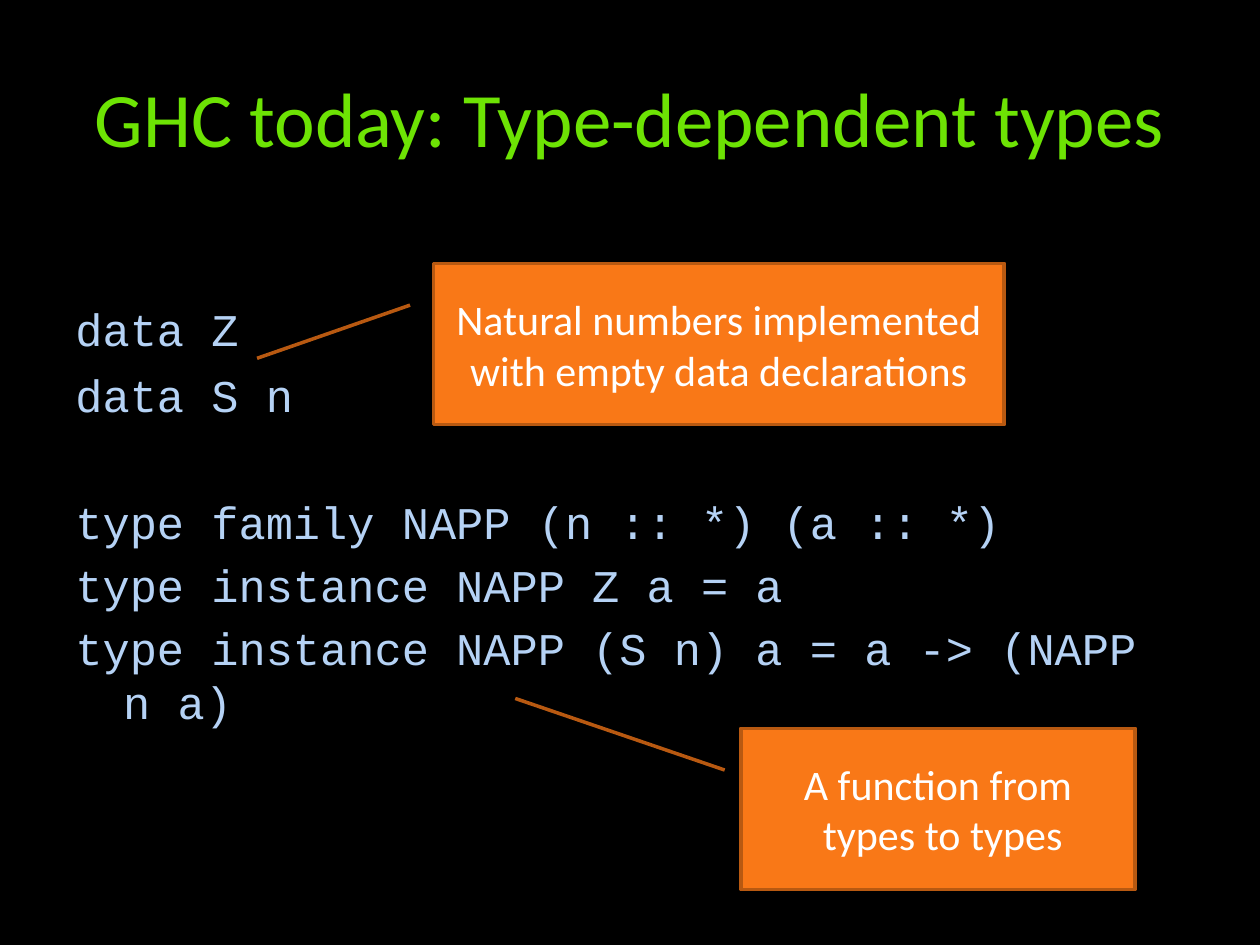
from pptx import Presentation
from pptx import util as u
from pptx.dml.color import RGBColor
from pptx.enum import shapes, text

# Content
TITLE = "GHC today: Type-dependent types"
CODE = [  # line, points of space before it
    ("data Z", 0),
    ("data S n", 7),
    ("type family NAPP (n :: *) (a :: *)", 41.5),
    ("type instance NAPP Z a = a", 5.2),
    ("type instance NAPP (S n) a = a -> (NAPP n a)", 5.2),
]
CALLOUTS = [  # place, pointer adjustments, lines
    ((3.44, 2.09, 4.53, 1.28), (0.259, -0.041, 0.589, -0.309),
     ["Natural numbers implemented with empty data declarations"]),
    ((5.88, 5.78, 3.13, 1.28), (0.259, -0.041, -0.185, -0.572),
     ["A function from", " types to types"]),
]

# Formats
TITLE_FONT = {"name": "Calibri", "size": u.Pt(44), "color": "6DE304"}
CODE_FONT = {"name": "Courier New", "size": u.Pt(25.9), "color": "B5D2F5"}
CALLOUT_FONT = {"name": "Calibri", "size": u.Pt(24), "color": "FFFFFF"}
CENTERED = {"alignment": text.PP_ALIGN.CENTER}


def paint(color_format, value):
    color_format.rgb = RGBColor.from_string(value)


def inches(place):
    return [u.Inches(length) for length in place]


def write(box, lines, font, para_format, anchor):
    frame = box.text_frame
    frame.word_wrap = True
    frame.vertical_anchor = anchor
    for index, line in enumerate(lines):
        para = frame.add_paragraph() if index else frame.paragraphs[0]
        for name, value in para_format.items():
            setattr(para, name, value)
        span = para.add_run()
        span.text = line
        for name, value in font.items():
            if name == "color":
                paint(span.font.color, value)
            else:
                setattr(span.font, name, value)


deck = Presentation()
deck.slide_width, deck.slide_height = inches((10, 7.5))
page = deck.slides.add_slide(deck.slide_layouts[6])
page.background.fill.solid()
paint(page.background.fill.fore_color, "000000")

# Title
title = page.shapes.add_textbox(*inches((0.5, 0.3, 9, 1.25)))
write(title, [TITLE], TITLE_FONT, CENTERED, text.MSO_ANCHOR.MIDDLE)

# Code with hanging indent, set below the top of its box
code = page.shapes.add_textbox(*inches((0.5, 1.75, 9, 4.95)))
code.text_frame.margin_top = u.Inches(0.64)
write(code, [line for line, _ in CODE], CODE_FONT,
      {"line_spacing": u.Pt(30.9)}, text.MSO_ANCHOR.TOP)
for para, (_, space) in zip(code.text_frame.paragraphs, CODE):
    para.space_before = u.Pt(space)
    indent = para._p.get_or_add_pPr()
    indent.set("marL", str(u.Inches(0.38)))
    indent.set("indent", str(u.Inches(-0.38)))

# Callouts
for place, pointer, lines in CALLOUTS:
    callout = page.shapes.add_shape(
        shapes.MSO_SHAPE.LINE_CALLOUT_1, *inches(place))
    callout.shadow.inherit = False
    for index, value in enumerate(pointer):
        callout.adjustments[index] = value
    callout.fill.solid()
    paint(callout.fill.fore_color, "F97817")
    paint(callout.line.color, "B85911")
    callout.line.width = u.Pt(2)
    write(callout, lines, CALLOUT_FONT, CENTERED, text.MSO_ANCHOR.MIDDLE)

deck.save("out.pptx")
